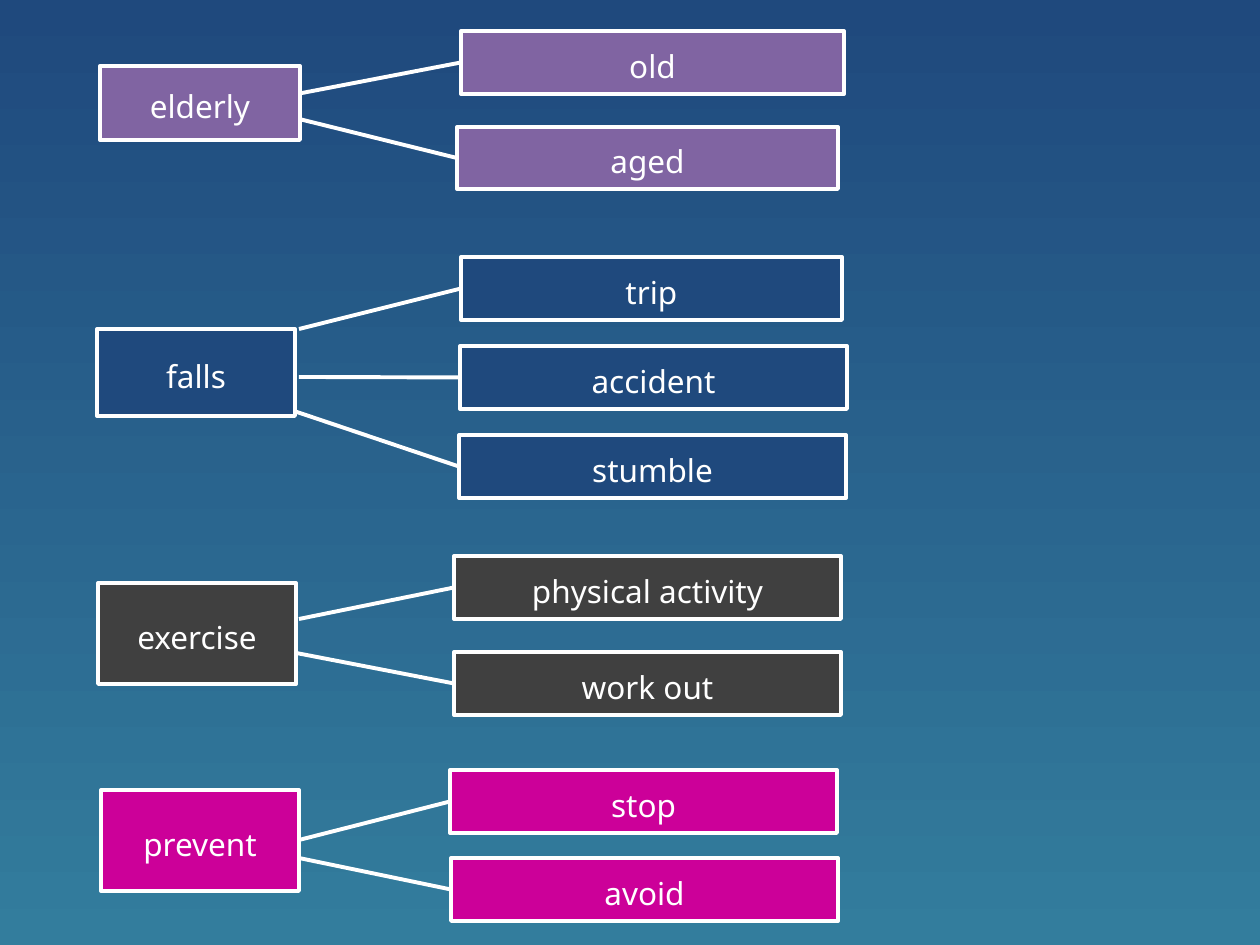
"""Build a slide that links four keywords to their synonyms."""
from lxml import etree
from pptx import Presentation, util as u
from pptx.dml.color import RGBColor
from pptx.enum import shapes, text
from pptx.oxml import ns

PX = 914400 / 126


def paint(target, color):
    target.solid()
    target.fore_color.rgb = RGBColor.from_string(color)


def add_box(page, word, color, *bounds):
    box = page.shapes.add_shape(shapes.MSO_SHAPE.FLOWCHART_PROCESS,
                                *[round(n * PX) for n in bounds])
    box.shadow.inherit = False
    paint(box.fill, color)
    paint(box.line.fill, "FFFFFF")
    box.line.width = u.Pt(2.25)
    frame = box.text_frame
    frame.word_wrap = True
    frame.vertical_anchor = text.MSO_ANCHOR.MIDDLE
    frame.margin_top, frame.margin_bottom = u.Inches(0.05), 0
    para = frame.paragraphs[0]
    para.text = word
    para.alignment = text.PP_ALIGN.CENTER
    para.font.name, para.font.size = "Noto Sans", u.Pt(18)
    paint(para.font.fill, "FFFFFF")


# keyword, colour, bounds, then synonyms as (word, bounds, line start)
GROUPS = [
    ("elderly", "8064A2", (100, 66, 200, 74), [
        ("old", (461, 31, 383, 63), (297, 94)),
        ("aged", (457, 127, 381, 62), (291, 117))]),
    ("falls", "1F497D", (97, 329, 198, 87), [
        ("trip", (461, 257, 381, 63), (299, 329)),
        ("accident", (460, 346, 387, 63), (299, 377)),
        ("stumble", (459, 435, 387, 63), (291, 410))]),
    ("exercise", "404040", (98, 583, 198, 101), [
        ("physical activity", (454, 556, 387, 63), (299, 619)),
        ("work out", (454, 652, 387, 63), (291, 652))]),
    ("prevent", "CC0099", (101, 790, 198, 101), [
        ("stop", (450, 770, 387, 63), (299, 840)),
        ("avoid", (451, 858, 387, 63), (299, 858))]),
]

deck = Presentation()
deck.slide_width, deck.slide_height = u.Inches(10), u.Inches(7.5)
page = deck.slides.add_slide(deck.slide_layouts[6])

backdrop = page.background.fill
backdrop.gradient()
backdrop.gradient_angle = 270
for stop, position, color in zip(backdrop.gradient_stops, (0, 1), ("1F497D", "337D9D")):
    stop.position = position
    stop.color.rgb = RGBColor.from_string(color)

for keyword, color, bounds, synonyms in GROUPS:
    for word, (left, top, width, height), start in synonyms:
        add_box(page, word, color, left, top, width, height)
        ends = (*start, left, top + height / 2)
        link = page.shapes.add_connector(shapes.MSO_CONNECTOR.STRAIGHT,
                                         *[round(n * PX) for n in ends])
        paint(link.line.fill, "FFFFFF")
        link.line.width = u.Pt(2.25)
        etree.SubElement(link._element.spPr, ns.qn("a:effectLst"))
    add_box(page, keyword, color, *bounds)

deck.save("out.pptx")
